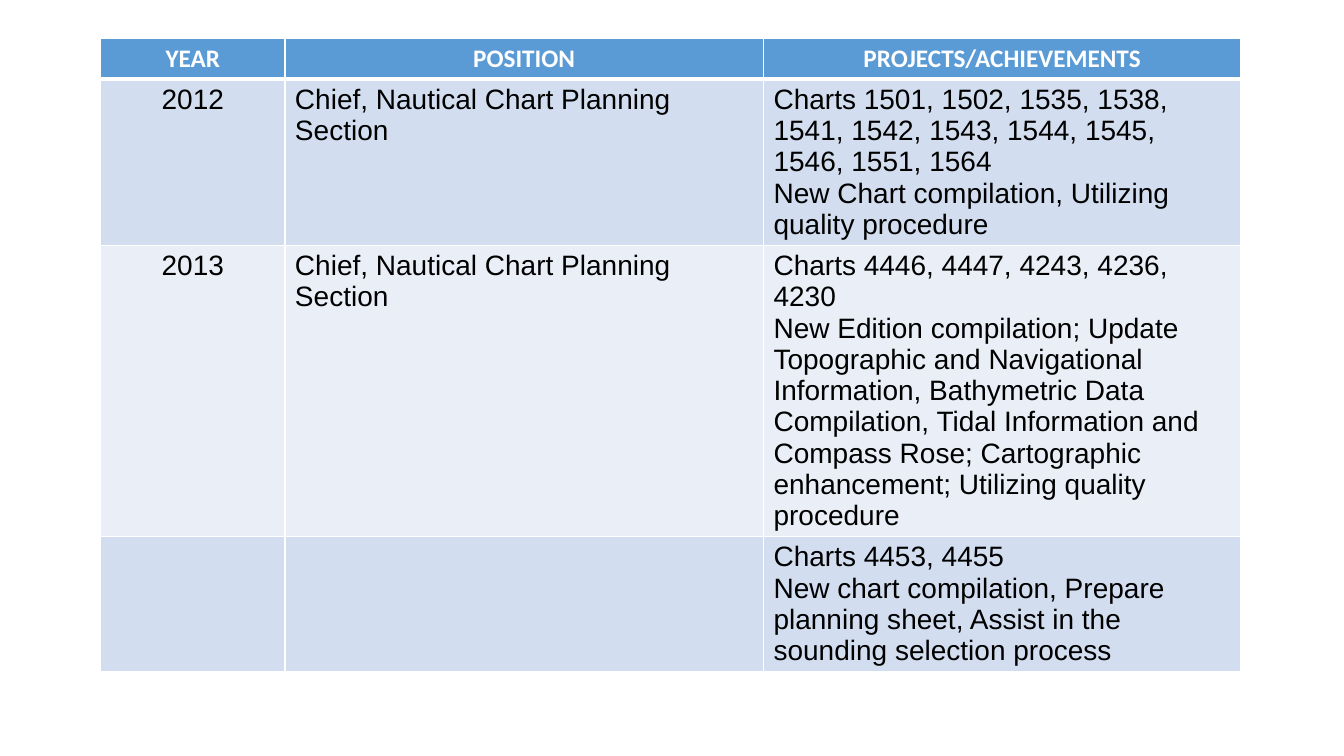
from lxml import etree
from pptx import Presentation
from pptx import util as u
from pptx.dml.color import RGBColor
from pptx.enum import text
from pptx.oxml.ns import qn

COLORS = {"header": "5B9BD5", "odd": "D2DEEF", "even": "EAEFF7",
          "white": "FFFFFF", "black": "000000"}

COLUMN_WIDTHS = [4.64, 12.06, 12.03]
ROW_HEIGHTS = [1.03, 4.18, 7.33, 3.39]

CAREER = [
    ["YEAR", "POSITION", "PROJECTS/ACHIEVEMENTS"],
    ["2012", "Chief, Nautical Chart Planning Section",
     "Charts 1501, 1502, 1535, 1538, 1541, 1542, 1543, 1544, 1545, 1546, 1551, 1564\n"
     "New Chart compilation, Utilizing quality procedure"],
    ["2013", "Chief, Nautical Chart Planning Section",
     "Charts 4446, 4447, 4243, 4236, 4230\n"
     "New Edition compilation; Update Topographic and Navigational Information, "
     "Bathymetric Data Compilation, Tidal Information and Compass Rose; "
     "Cartographic enhancement; Utilizing quality procedure"],
    ["", "",
     "Charts 4453, 4455\n"
     "New chart compilation, Prepare planning sheet, "
     "Assist in the sounding selection process"],
]


class SlideBuilder:
    """Holds the table style and the current slide."""

    header_style = {"name": "Calibri", "size": 18, "bold": True, "color": "white"}
    body_style = {"name": "Arial", "size": 20, "bold": False, "color": "black"}

    def __init__(self, slide):
        self.slide = slide

    def table(self, left, top, widths, heights, content):
        frame = self.slide.shapes.add_table(
            len(heights), len(widths), u.Cm(left), u.Cm(top),
            u.Cm(sum(widths)), u.Cm(sum(heights)))
        grid = frame.table
        for column, width in zip(grid.columns, widths):
            column.width = u.Cm(width)
        for row, height in zip(grid.rows, heights):
            row.height = u.Cm(height)
        for r, entries in enumerate(content):
            for c, entry in enumerate(entries):
                self.cell(grid.cell(r, c), entry, r, c)

    def cell(self, cell, entry, row, column):
        band = "header" if row == 0 else "odd" if row % 2 else "even"
        cell.fill.solid()
        cell.fill.fore_color.rgb = RGBColor.from_string(COLORS[band])
        self.borders(cell, top=3 if row == 1 else 1, bottom=3 if row == 0 else 1)
        cell.text_frame.text = entry
        style = self.body_style if row else self.header_style
        centered = row == 0 or column == 0
        for paragraph in cell.text_frame.paragraphs:
            paragraph.alignment = text.PP_ALIGN.CENTER if centered else text.PP_ALIGN.LEFT
            for run in paragraph.runs:
                run.font.name = style["name"]
                run.font.size = u.Pt(style["size"])
                run.font.bold = style["bold"]
                run.font.color.rgb = RGBColor.from_string(COLORS[style["color"]])

    def borders(self, cell, top, bottom):
        """Draw white cell edges; top and bottom are widths in points."""
        properties = cell._tc.get_or_add_tcPr()
        edges = {"a:lnL": 1, "a:lnR": 1, "a:lnT": top, "a:lnB": bottom}
        for position, (tag, points) in enumerate(edges.items()):
            line = etree.Element(qn(tag), w=str(u.Pt(points)))
            fill = etree.SubElement(line, qn("a:solidFill"))
            etree.SubElement(fill, qn("a:srgbClr"), val=COLORS["white"])
            properties.insert(position, line)


def main():
    presentation = Presentation()
    presentation.slide_width = u.Cm(33.87)
    presentation.slide_height = u.Cm(19.05)
    slide = presentation.slides.add_slide(presentation.slide_layouts[6])
    SlideBuilder(slide).table(2.54, 0.96, COLUMN_WIDTHS, ROW_HEIGHTS, CAREER)
    presentation.save("out.pptx")


if __name__ == "__main__":
    main()
